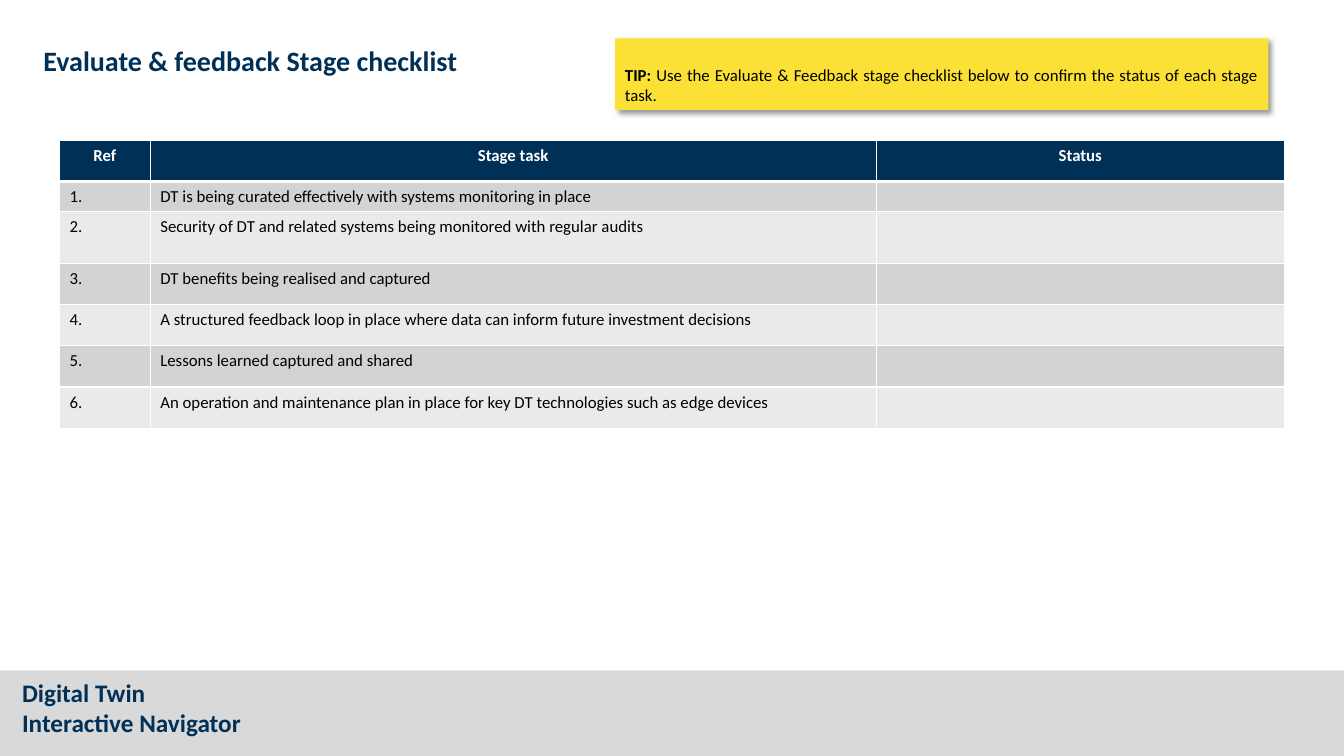
from dataclasses import dataclass

from lxml.etree import SubElement
from pptx import Presentation
from pptx.dml.color import RGBColor
from pptx.enum.shapes import MSO_SHAPE
from pptx.enum.text import MSO_ANCHOR, PP_ALIGN
from pptx.oxml import parse_xml
from pptx.oxml.ns import nsdecls, qn
from pptx.util import Inches, Pt


@dataclass(frozen=True)
class Theme:
    font: str = "Calibri"
    navy: str = "003056"
    yellow: str = "FBE136"
    footer_gray: str = "D9D9D9"
    bands: tuple = ("D2D3D5", "EAEAEB")
    white: str = "FFFFFF"
    black: str = "000000"
    title_size: int = 20
    footer_size: int = 18
    body_size: int = 12


THEME = Theme()
WIDTH, HEIGHT = 13.33, 7.5
TOP = 0.38  # shared top edge of the title and the tip
COLUMNS = (0.9, 7.2, 4.05)
ROW_HEIGHT = 0.41
SPECIAL_ROWS = {1: 0.29, 2: 0.51}
HEADINGS = ("Ref", "Stage task", "Status")
TASKS = (
    "DT is being curated effectively with systems monitoring in place",
    "Security of DT and related systems being monitored with regular audits",
    "DT benefits being realised and captured",
    "A structured feedback loop in place where data can inform future investment decisions",
    "Lessons learned captured and shared",
    "An operation and maintenance plan in place for key DT technologies such as edge devices",
)


def box(left, top, width, height):
    return [Inches(length) for length in (left, top, width, height)]


def add_run(paragraph, text, size, color, bold=False):
    run = paragraph.add_run()
    run.text = text
    run.font.name = THEME.font
    run.font.size = Pt(size)
    run.font.bold = bold
    run.font.color.rgb = RGBColor.from_string(color)


def add_panel(slide, place, color):
    panel = slide.shapes.add_shape(MSO_SHAPE.RECTANGLE, *place)
    panel.shadow.inherit = False
    panel.fill.solid()
    panel.fill.fore_color.rgb = RGBColor.from_string(color)
    panel.line.fill.background()
    return panel


def add_title(slide, text):
    title = slide.shapes.title
    title.left, title.top, title.width, title.height = box(0.33, TOP, 5.77, 0.44)
    title.text_frame.vertical_anchor = MSO_ANCHOR.TOP
    paragraph = title.text_frame.paragraphs[0]
    paragraph.alignment = PP_ALIGN.LEFT
    add_run(paragraph, text, THEME.title_size, THEME.navy, bold=True)


def add_tip(slide, label, text):
    tip = add_panel(slide, box(6.1, TOP, 6.48, 0.71), THEME.yellow)
    # Soft shadow towards the lower right
    effects = tip._element.spPr.find(qn("a:effectLst"))
    effects.append(parse_xml(
        f'<a:outerShdw {nsdecls("a")} blurRad="{Pt(4)}" dist="{Pt(3)}" dir="2700000" '
        f'algn="tl" rotWithShape="0"><a:srgbClr val="{THEME.black}">'
        '<a:alpha val="40000"/></a:srgbClr></a:outerShdw>'))
    frame = tip.text_frame
    frame.word_wrap = True
    frame.vertical_anchor = MSO_ANCHOR.BOTTOM
    paragraph = frame.paragraphs[0]
    paragraph.alignment = PP_ALIGN.JUSTIFY
    add_run(paragraph, label, THEME.body_size, THEME.black, bold=True)
    add_run(paragraph, text, THEME.body_size, THEME.black)


def set_borders(cell, **widths):
    properties = cell._tc.get_or_add_tcPr()
    for index, side in enumerate("LRTB"):
        properties.insert(index, parse_xml(
            f'<a:ln{side} {nsdecls("a")} w="{Pt(widths.get(side, 1))}"><a:solidFill>'
            f'<a:srgbClr val="{THEME.white}"/></a:solidFill></a:ln{side}>'))


def fill_cell(cell, text, fill, header):
    cell.fill.solid()
    cell.fill.fore_color.rgb = RGBColor.from_string(fill)
    paragraph = cell.text_frame.paragraphs[0]
    if header:
        paragraph.alignment = PP_ALIGN.CENTER
    if text:
        color = THEME.white if header else THEME.black
        add_run(paragraph, text, THEME.body_size, color, bold=header)
    else:
        # Keep an empty cell as low as a line of body text
        SubElement(paragraph._p, qn("a:endParaRPr"), sz=str(THEME.body_size * 100))


def add_checklist(slide):
    rows = [HEADINGS] + [(f"{number}.", task, "") for number, task in enumerate(TASKS, 1)]
    heights = [SPECIAL_ROWS.get(index, ROW_HEIGHT) for index in range(len(rows))]
    place = box(0.59, 1.39, sum(COLUMNS), sum(heights))
    table = slide.shapes.add_table(len(rows), len(COLUMNS), *place).table
    for column, width in zip(table.columns, COLUMNS):
        column.width = Inches(width)
    for index, (texts, height) in enumerate(zip(rows, heights)):
        table.rows[index].height = Inches(height)
        header = index == 0
        fill = THEME.navy if header else THEME.bands[(index - 1) % 2]
        for cell, text in zip(table.rows[index].cells, texts):
            fill_cell(cell, text, fill, header)
            set_borders(cell, B=3 if header else 1, T=3 if index == 1 else 1)


def add_footer(slide, lines):
    top = 6.65
    add_panel(slide, box(0, top, WIDTH, HEIGHT - top), THEME.footer_gray)
    frame = slide.shapes.add_textbox(*box(0.12, top + 0.02, 4.05, 0.71)).text_frame
    frame.word_wrap = True
    for index, line in enumerate(lines):
        paragraph = frame.add_paragraph() if index else frame.paragraphs[0]
        add_run(paragraph, line, THEME.footer_size, THEME.navy, bold=True)


def main():
    presentation = Presentation()
    presentation.slide_width = Inches(WIDTH)
    presentation.slide_height = Inches(HEIGHT)
    slide = presentation.slides.add_slide(presentation.slide_layouts.get_by_name("Title Only"))

    add_footer(slide, ("Digital Twin", "Interactive Navigator"))
    add_checklist(slide)
    add_title(slide, "Evaluate & feedback Stage checklist")
    add_tip(slide, "TIP: ", "Use the Evaluate & Feedback stage checklist below "
            "to confirm the status of each stage task.")
    presentation.save("out.pptx")


if __name__ == "__main__":
    main()
